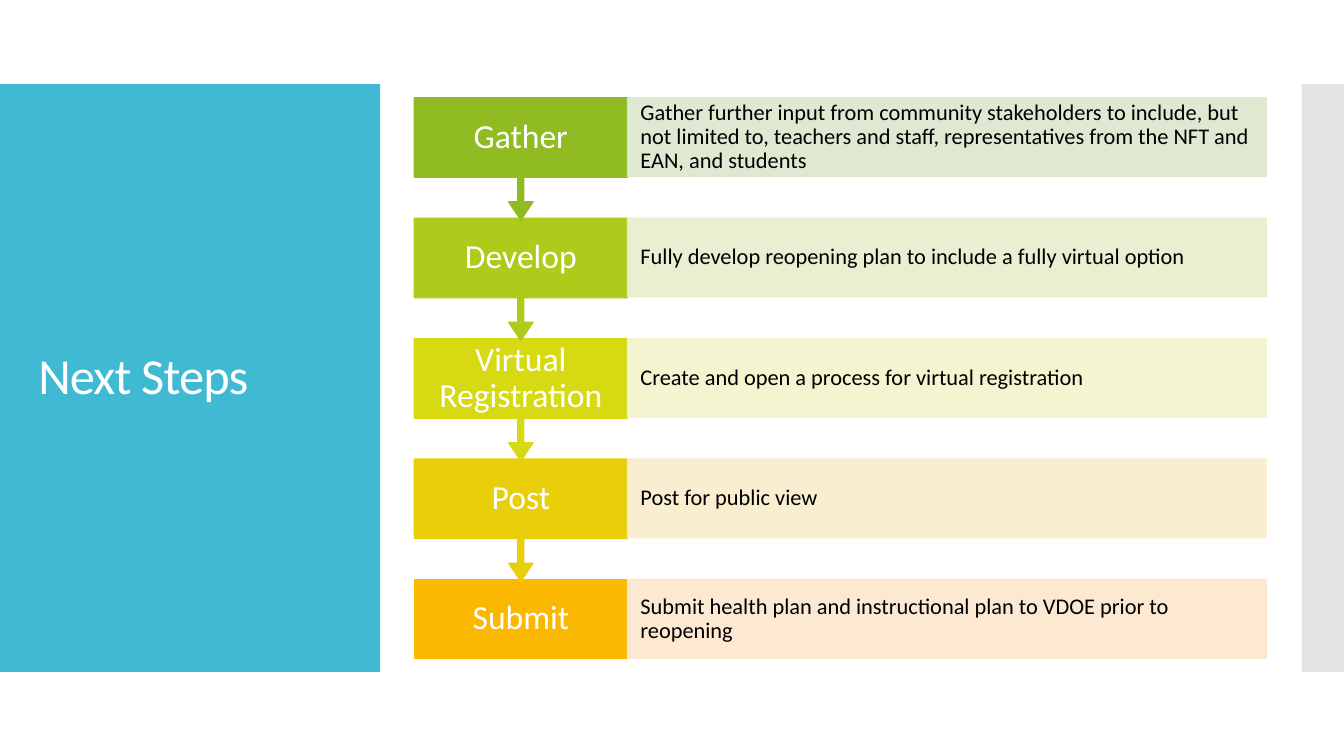
from lxml import etree
from pptx import Presentation
from pptx.dml.color import RGBColor
from pptx.enum.shapes import MSO_SHAPE
from pptx.enum.text import MSO_ANCHOR, PP_ALIGN
from pptx.oxml.ns import qn
from pptx.util import Inches, Pt

RECT, CALLOUT = MSO_SHAPE.RECTANGLE, MSO_SHAPE.DOWN_ARROW_CALLOUT
MIDDLE = MSO_ANCHOR.MIDDLE
LEFT, CENTER = PP_ALIGN.LEFT, PP_ALIGN.CENTER
FONT = "Calibri"
TITLE_ONLY = 5

SLIDE_W, SLIDE_H = 13.33, 7.5
BAND_TOP, BAND_H = SLIDE_H / 9, SLIDE_H * 7 / 9
PANEL_W, EDGE_W = 3.77, 0.42
FLOW_BOX = (4.11, 0.97, 8.45, 5.56)
LABEL_SHARE = 0.25   # label column, as a share of the flow's width
GAP_SHARE = 0.53     # gap between rows, as a share of a row's height
ARROW_OVERLAP = 0.02
CALLOUT_ADJUSTMENTS = (0.05, 0.1, 0.15, 0.65)

STEPS = [
    ("Gather", "Gather further input from community stakeholders to include, but not "
     "limited to, teachers and staff, representatives from the NFT and EAN, and students",
     "90BB23", "DCE7CD"),
    ("Develop", "Fully develop reopening plan to include a fully virtual option",
     "B0CA1B", "E7EECC"),
    ("Virtual Registration", "Create and open a process for virtual registration",
     "D7D913", "F4F3CB"),
    ("Post", "Post for public view", "E9CE0A", "F9EECB"),
    ("Submit", "Submit health plan and instructional plan to VDOE prior to reopening",
     "FAB900", "FDE6CC"),
]


def paint(fill, color, opacity=100):
    fill.solid()
    fill.fore_color.rgb = RGBColor.from_string(color)
    if opacity < 100:
        for srgb in fill._xPr.iter(qn("a:srgbClr")):
            etree.SubElement(srgb, qn("a:alpha"), val=str(opacity * 1000))


def add_block(slide, kind, box, color, opacity=100, outlined=True):
    block = slide.shapes.add_shape(kind, *(Inches(length) for length in box))
    block.shadow.inherit = False
    paint(block.fill, color, opacity)
    if outlined:
        block.line.width = Pt(0.85)
        paint(block.line.fill, color, opacity)
    else:
        block.line.fill.background()
    return block


def write(shape, text, size, color, align=LEFT, side_inset=0.1):
    frame = shape.text_frame
    frame.text = text
    frame.word_wrap = True
    frame.vertical_anchor = MIDDLE
    frame.margin_left = frame.margin_right = Inches(side_inset)
    frame.margin_top = frame.margin_bottom = 0
    paragraph = frame.paragraphs[0]
    paragraph.alignment = align
    paragraph.line_spacing = 0.9
    font = paragraph.runs[0].font
    font.name, font.size = FONT, Pt(size)
    font.color.rgb = RGBColor.from_string(color)


def add_title_panel(slide, box, text):
    left, top, width, height = box
    add_block(slide, RECT, box, "40BAD2", outlined=False)
    title = slide.shapes.title
    slide.shapes._spTree.append(title._element)  # in front of the panel
    title.left, title.top = Inches(left + 0.28), Inches(top + 0.4)
    title.width, title.height = Inches(width - 0.55), Inches(height - 0.8)
    write(title, text, 36, "FFFFFF")
    title.text_frame.paragraphs[0].runs[0].font._element.set("spc", "-60")


def add_step(slide, box, step, arrow_h):
    """Place a label, with an arrow of arrow_h below it if not 0, and its detail."""
    left, top, width, height = box
    name, detail, strong, pale = step
    label_w = width * LABEL_SHARE
    label = add_block(slide, CALLOUT if arrow_h else RECT,
                      (left, top, label_w, height + arrow_h), strong)
    if arrow_h:
        for index, share in enumerate(CALLOUT_ADJUSTMENTS):
            label.adjustments[index] = share
    write(label, name, 24, "FFFFFF", CENTER, 0.15)
    description = add_block(slide, RECT, (left + label_w, top, width - label_w, height),
                            pale, opacity=90)
    write(description, detail, 16, "000000", side_inset=0.13)


def add_flow(slide, box, steps):
    """Stack the steps from the bottom up, so each arrow tip lies over the next label."""
    left, top, width, height = box
    last = len(steps) - 1
    row_h = height / (len(steps) + last * GAP_SHARE)
    gap = row_h * GAP_SHARE
    for index in range(last, -1, -1):
        arrow_h = gap + ARROW_OVERLAP if index < last else 0
        row_box = (left, top + index * (row_h + gap), width, row_h)
        add_step(slide, row_box, steps[index], arrow_h)


def main():
    prs = Presentation()
    prs.slide_width, prs.slide_height = Inches(SLIDE_W), Inches(SLIDE_H)
    slide = prs.slides.add_slide(prs.slide_layouts[TITLE_ONLY])
    add_title_panel(slide, (0, BAND_TOP, PANEL_W, BAND_H), "Next Steps")
    add_block(slide, RECT, (SLIDE_W - EDGE_W, BAND_TOP, EDGE_W, BAND_H),
              "C8C8C8", opacity=50, outlined=False)
    add_flow(slide, FLOW_BOX, STEPS)
    prs.save("out.pptx")


if __name__ == "__main__":
    main()
